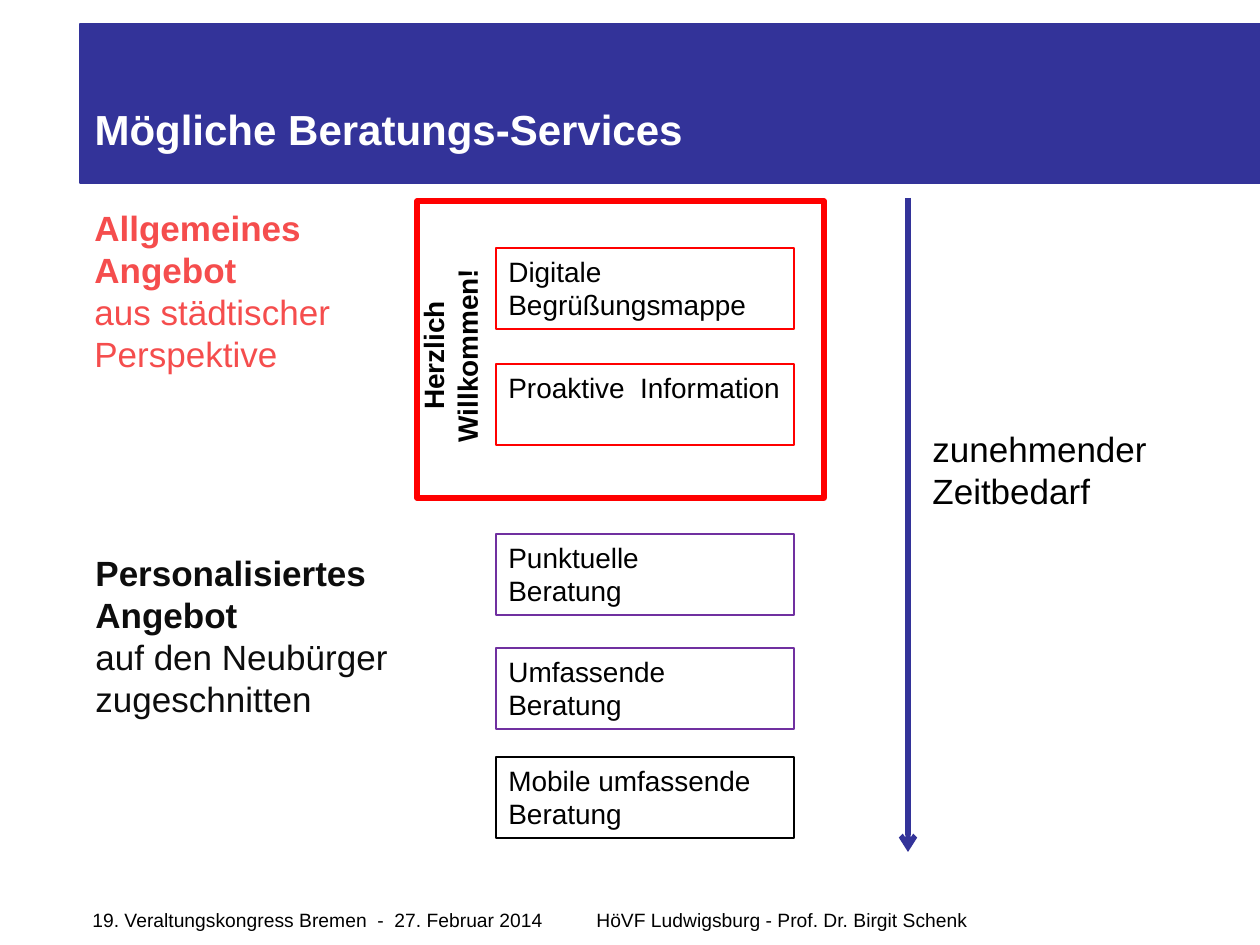
import pptx
import pptx.dml.color
import pptx.enum.shapes
import pptx.enum.text
import pptx.oxml
import pptx.oxml.ns
import pptx.util

PX = 914400 / 126
FONT = "Arial"
BLUE, RED, PURPLE, BLACK = "333399", "FF0000", "7030A0", "000000"

TITLE = "Mögliche Beratungs-Services"
FOOTER = "19. Veraltungskongress Bremen  -  27. Februar 2014\tHöVF Ludwigsburg - Prof. Dr. Birgit Schenk"
WELCOME = "Herzlich Willkommen!"
TIME_NEED = "zunehmender Zeitbedarf"

SERVICES = [
    (248, RED, 0.75, ["Digitale Begrüßungsmappe"]),
    (364, RED, 0.75, ["Proaktive  Information"]),
    (534, PURPLE, 1, ["Punktuelle", "Beratung"]),
    (648, PURPLE, 1, ["Umfassende", "Beratung"]),
    (757, BLACK, 1, ["Mobile umfassende", "Beratung"]),
]
OFFERS = [
    ((82, 200, 300, 183), "F54D4D", ["Allgemeines Angebot", "aus städtischer Perspektive"]),
    ((83, 545, 336, 183), "0D0D0D", ["Personalisiertes Angebot", "auf den Neubürger zugeschnitten"]),
]


def px(*lengths):
    return [round(length * PX) for length in lengths]


def rgb(code):
    return pptx.dml.color.RGBColor.from_string(code)


def write(holder, lines, size, color=BLACK, bold=False,
          align=pptx.enum.text.PP_ALIGN.LEFT):
    frame = holder.text_frame
    frame.word_wrap = True
    frame.vertical_anchor = pptx.enum.text.MSO_ANCHOR.TOP
    frame.text = "\n".join(lines)
    for paragraph in frame.paragraphs:
        paragraph.alignment = align
        font = paragraph.font
        font.name, font.size, font.bold = FONT, pptx.util.Pt(size), bold
        font.color.rgb = rgb(color)
    return frame


def add_text(box, lines, size, **style):
    holder = slide.shapes.add_textbox(*px(*box))
    write(holder, lines, size, **style)
    return holder


def add_box(box, line, width, fill=None):
    shape = slide.shapes.add_shape(pptx.enum.shapes.MSO_SHAPE.RECTANGLE, *px(*box))
    shape.shadow.inherit = False
    shape.line.color.rgb = rgb(line)
    shape.line.width = pptx.util.Pt(width)
    if fill:
        shape.fill.solid()
        shape.fill.fore_color.rgb = rgb(fill)
    else:
        shape.fill.background()
    return shape


deck = pptx.Presentation()
deck.slide_width, deck.slide_height = px(1260, 945)
slide = deck.slides.add_slide(deck.slide_layouts[5])

band = add_box((80, 24, 1180, 159), BLUE, 0.75, fill=BLUE)
title = slide.shapes.title
title.left, title.top, title.width, title.height = px(82, 97, 941, 63)
write(title, [TITLE], 24, color="FFFFFF", bold=True)
band.element.addnext(title.element)

footer = slide.shapes.add_textbox(*px(80, 902, 1144, 37))
footer_format = footer.text_frame.paragraphs[0]._p.get_or_add_pPr()
tabs = pptx.oxml.parse_xml(
    f'<a:tabLst {pptx.oxml.ns.nsdecls("a")}><a:tab pos="{px(504)[0]}" algn="l"/></a:tabLst>')
footer_format.append(tabs)
write(footer, [FOOTER], 11)

for top, color, width, lines in SERVICES:
    write(add_box((496, top, 298, 81), color, width), lines, 16)

add_box((417, 201, 407, 297), RED, 3)
welcome = add_text((307, 315, 287, 81), [WELCOME], 16, bold=True,
                   align=pptx.enum.text.PP_ALIGN.CENTER)
welcome.rotation = 270

arrow = slide.shapes.add_connector(
    pptx.enum.shapes.MSO_CONNECTOR.STRAIGHT, *px(908, 198, 908, 852))
arrow.line.color.rgb = rgb(BLUE)
arrow.line.width = pptx.util.Pt(3)
for parent, tag in [(arrow.line._get_or_add_ln(), '<a:tailEnd {} type="arrow"/>'),
                    (arrow.element.spPr, "<a:effectLst {}/>")]:
    parent.append(pptx.oxml.parse_xml(tag.format(pptx.oxml.ns.nsdecls("a"))))

add_text((920, 421, 306, 97), [TIME_NEED], 20)

for box, color, lines in OFFERS:
    offer = add_text(box, lines, 20, color=color)
    offer.text_frame.paragraphs[0].font.bold = True

deck.save("out.pptx")
